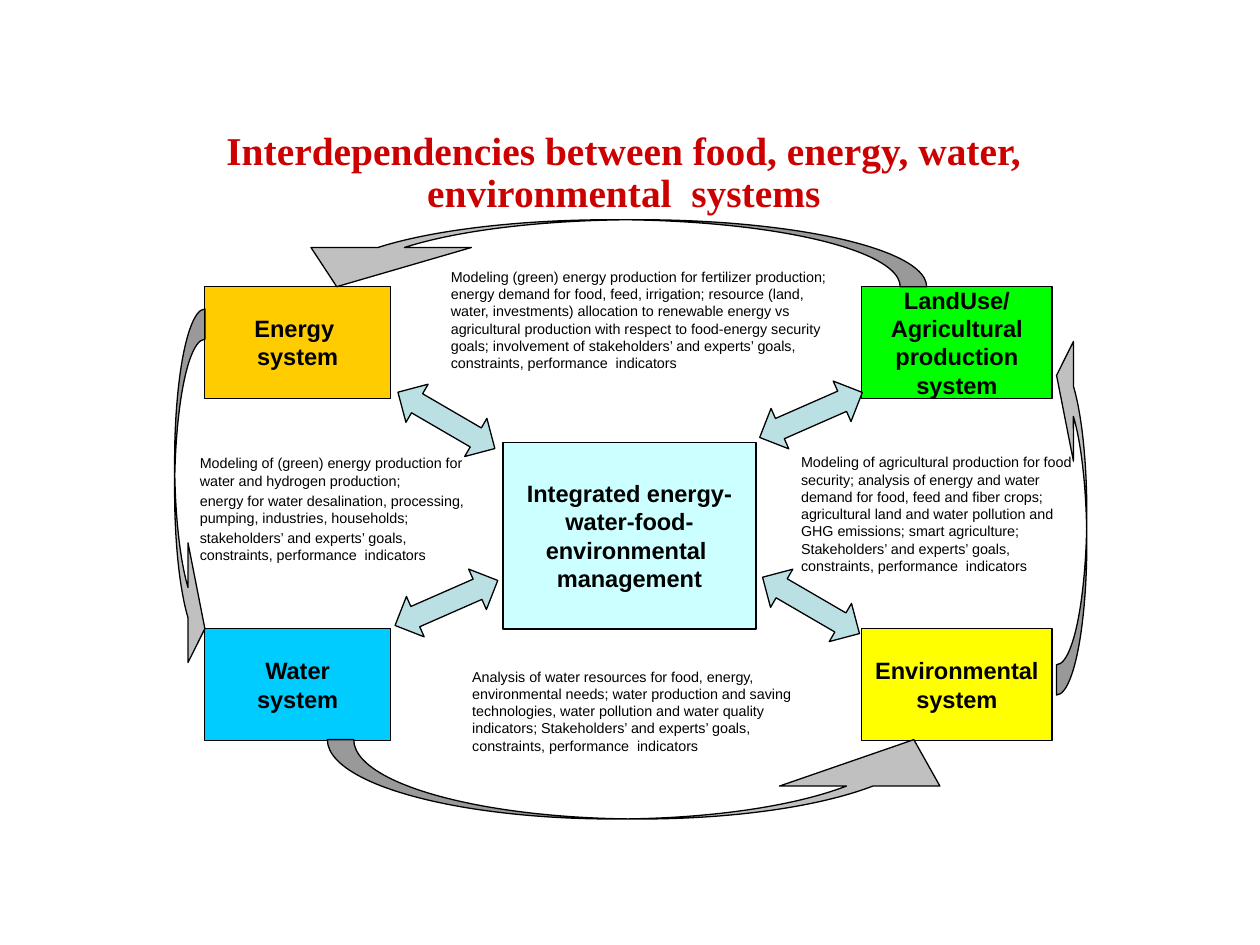
from pptx import Presentation
from pptx import util as u
from pptx.dml.color import RGBColor
from pptx.enum import shapes, text

Cm, Pt = u.Cm, u.Pt
KIND = shapes.MSO_SHAPE

BLACK = RGBColor(0x00, 0x00, 0x00)
TITLE_RED = RGBColor(0xCC, 0x00, 0x00)
CENTRE_CYAN = RGBColor(0xCC, 0xFF, 0xFF)
ENERGY_ORANGE = RGBColor(0xFF, 0xCC, 0x00)
WATER_BLUE = RGBColor(0x00, 0xCC, 0xFF)
ENVIRONMENT_YELLOW = RGBColor(0xFF, 0xFF, 0x00)
LAND_GREEN = RGBColor(0x00, 0xFF, 0x00)
ARROW_TEAL = RGBColor(0xBB, 0xE0, 0xE3)
LOOP_GREY = RGBColor(0xC0, 0xC0, 0xC0)

# Columns and rows shared by the corner systems (cm)
LEFT, RIGHT = 4.12, 17.37
TOP, BOTTOM = 5.77, 12.67
LEFT_WIDTH, RIGHT_WIDTH, SYSTEM_HEIGHT = 3.76, 3.84, 2.26

GOALS = "takeholders’ and experts’ goals, constraints, performance  indicators"


def write(frame, lines, size, font="Arial", bold=False, align=None,
          color=BLACK):
    frame.word_wrap = True
    frame.text = "\n".join(lines)
    for paragraph in frame.paragraphs:
        paragraph.alignment = align
        for run in paragraph.runs:
            run.font.name = font
            run.font.size = Pt(size)
            run.font.bold = bold
            run.font.color.rgb = color


def add_outlined(slide, kind, place, fill):
    outlined = slide.shapes.add_shape(kind, *map(Cm, place))
    outlined.shadow.inherit = False
    outlined.fill.solid()
    outlined.fill.fore_color.rgb = fill
    outlined.line.color.rgb = BLACK
    outlined.line.width = Pt(0.75)
    return outlined


def add_system(slide, place, fill, lines):
    system = add_outlined(slide, KIND.RECTANGLE, place, fill)
    system.text_frame.vertical_anchor = text.MSO_ANCHOR.MIDDLE
    write(system.text_frame, lines, 13.5, bold=True,
          align=text.PP_ALIGN.CENTER)


def add_note(slide, place, lines):
    frame = slide.shapes.add_textbox(*map(Cm, place)).text_frame
    write(frame, lines, 8.2)
    for paragraph in frame.paragraphs:
        paragraph.space_after = Pt(1.6)


def add_arrow(slide, kind, place, fill, rotation, adjustments):
    arrow = add_outlined(slide, kind, place, fill)
    arrow.rotation = rotation
    for index, value in enumerate(adjustments):
        arrow.adjustments[index] = value


def add_title(slide, place, wording):
    frame = slide.shapes.add_textbox(*map(Cm, place)).text_frame
    frame.margin_left = frame.margin_right = Cm(0.18)
    frame.margin_top = frame.margin_bottom = Cm(0.1)
    frame.vertical_anchor = text.MSO_ANCHOR.MIDDLE
    write(frame, [wording], 22.5, "Times New Roman", True,
          text.PP_ALIGN.CENTER, TITLE_RED)
    frame.paragraphs[0].line_spacing = 0.9


def main():
    deck = Presentation()
    deck.slide_width, deck.slide_height = Cm(25.4), Cm(19.05)
    slide = deck.slides.add_slide(deck.slide_layouts[6])

    # Central management box and the four systems around it
    add_system(slide, (10.14, 8.92, 5.1, 3.76), CENTRE_CYAN,
               ["Integrated energy-water-food-environmental ", "management"])
    for left, top, width, fill, lines in (
        (LEFT, TOP, LEFT_WIDTH, ENERGY_ORANGE, ["Energy  system"]),
        (LEFT, BOTTOM, LEFT_WIDTH, WATER_BLUE, ["Water", "system"]),
        (RIGHT, BOTTOM, RIGHT_WIDTH, ENVIRONMENT_YELLOW,
         ["Environmental", "system"]),
        (RIGHT, TOP, RIGHT_WIDTH, LAND_GREEN,
         ["LandUse/", "Agricultural production system"]),
    ):
        add_system(slide, (left, top, width, SYSTEM_HEIGHT), fill, lines)

    # Notes on each pair of neighbouring systems
    add_note(slide, (3.78, 9.04, 5.99, 2.51), [
        "Modeling of (green) energy production for water and hydrogen "
        "production;",
        "energy for water desalination, processing, pumping, industries, "
        "households;",
        "s" + GOALS])
    add_note(slide, (9.27, 13.34, 7.34, 2.44), [
        "Analysis of water resources for food, energy, environmental needs; "
        "water production and saving technologies, water pollution and water "
        "quality indicators; S" + GOALS])
    add_note(slide, (15.9, 9.02, 5.99, 3.15), [
        "Modeling of agricultural production for food security; analysis of "
        "energy and water demand for food, feed and fiber crops; agricultural "
        "land and water pollution and GHG emissions; smart agriculture; S"
        + GOALS])
    add_note(slide, (8.84, 5.28, 8.26, 2.79), [
        "Modeling (green) energy production for fertilizer production; energy "
        "demand for food, feed, irrigation; resource (land, water, "
        "investments) allocation to renewable energy vs agricultural "
        "production with respect to food-energy security goals; involvement "
        "of s" + GOALS])

    # Two-way arrows between the centre and the systems
    for left, top, rotation in ((7.87, 11.71, 336.3), (15.22, 7.92, 336.3),
                                (15.22, 11.76, 30.2), (7.87, 8.03, 30.2)):
        add_arrow(slide, KIND.LEFT_RIGHT_ARROW, (left, top, 2.26, 0.89),
                  ARROW_TEAL, rotation, (0.5, 0.5))

    # Curved arrows looping round the outside: bottom, top, left, right
    side_bend = (1.4, 3.956, 0.558)
    for kind, place, rotation, bend in (
        (KIND.CURVED_RIGHT_ARROW, (12.52, 8.99, 1.6, 13.44), 270,
         (0.333, 2.021, 0.585)),
        (KIND.CURVED_RIGHT_ARROW, (11.25, -1.65, 1.35, 13.51), 90,
         (0.395, 2.396, 0.585)),
        (KIND.CURVED_UP_ARROW, (0, 9.75, 7.65, 0.61), 90, side_bend),
        (KIND.CURVED_UP_ARROW, (17.78, 9.88, 7.65, 0.61), 270, side_bend),
    ):
        add_arrow(slide, kind, place, LOOP_GREY, rotation, bend)

    # Title
    add_title(slide, (4.01, 2.54, 17.15, 1.93),
              "Interdependencies between food, energy, water, "
              "environmental  systems")

    deck.save("out.pptx")


if __name__ == "__main__":
    main()
